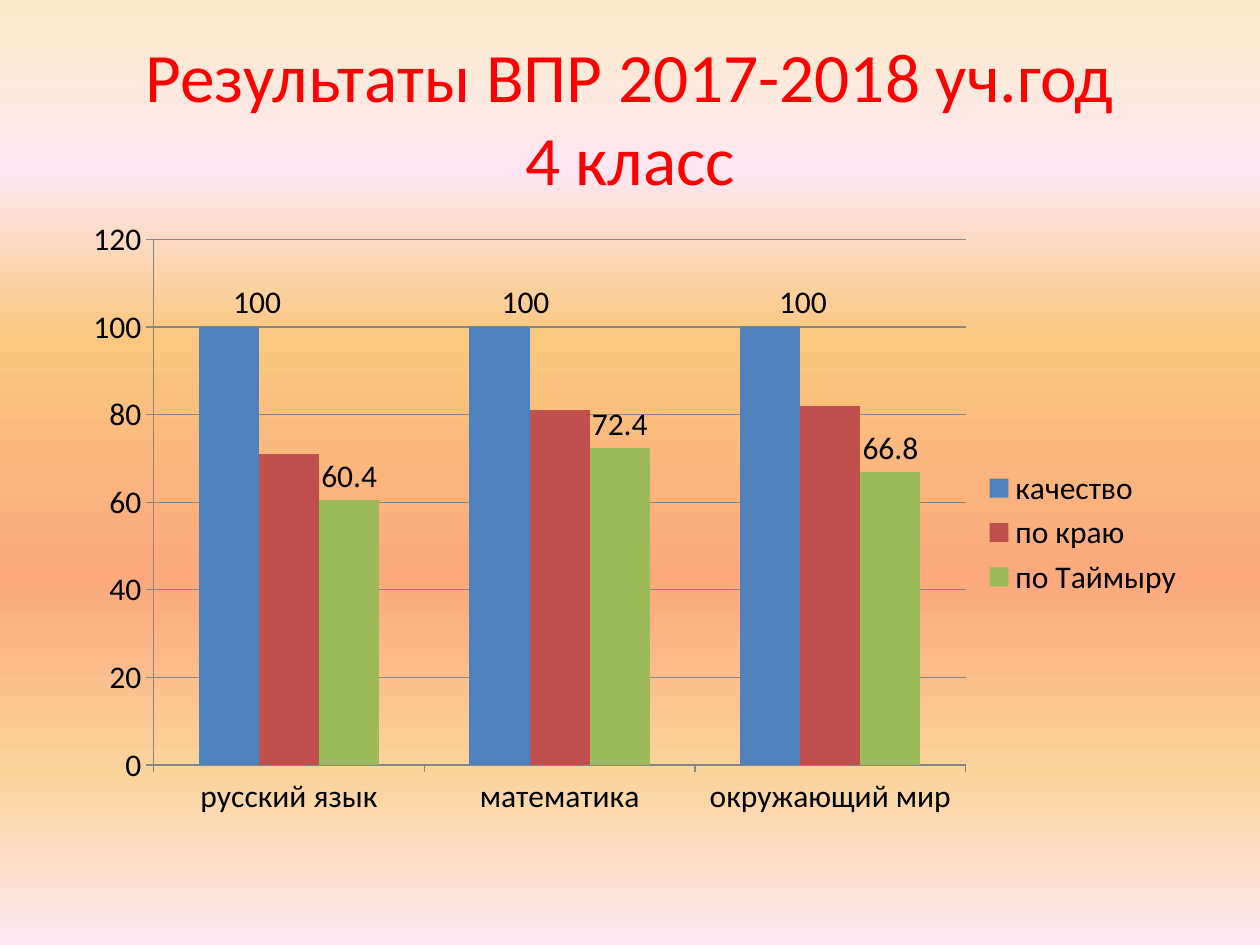
from lxml import etree
from pptx import Presentation
from pptx.chart import data
from pptx.dml import color
from pptx.enum import chart as ch, text
from pptx.oxml import ns, parse_xml
from pptx.util import Pt

RED = color.RGBColor(0xFF, 0x00, 0x00)
BLACK = color.RGBColor(0x00, 0x00, 0x00)
GREY = color.RGBColor(0x86, 0x86, 0x86)
BLUE = color.RGBColor(0x4F, 0x81, 0xBD)
BRICK = color.RGBColor(0xC0, 0x50, 0x4D)
GREEN = color.RGBColor(0x9B, 0xBB, 0x59)
CREAM = color.RGBColor(0xFB, 0xEA, 0xC7)
PINK = color.RGBColor(0xFE, 0xE7, 0xF2)
AMBER = color.RGBColor(0xFA, 0xC7, 0x7D)
CORAL = color.RGBColor(0xFB, 0xA9, 0x7D)
SAND = color.RGBColor(0xFB, 0xD4, 0x9C)

SUNSET = [(0, CREAM), (18, PINK), (36, AMBER), (61, CORAL), (82, SAND), (100, PINK)]
SUBJECTS = ["русский язык", "математика", "окружающий мир"]
RESULTS = [
    ("качество", (100, 100, 100), BLUE),
    ("по краю", (71, 81, 82), BRICK),
    ("по Таймыру", (60.4, 72.4, 66.8), GREEN),
]
LABEL_SHIFTS = [0.025, 0.023, 0.029]


def apply(target, formats):
    for name, value in formats.items():
        setattr(target, name, value)


def layout_xml(**settings):
    parts = "".join(f'<c:{key} val="{value}"/>' for key, value in settings.items())
    return parse_xml(
        f'<c:layout {ns.nsdecls("c")}><c:manualLayout>{parts}</c:manualLayout></c:layout>')


def paint_background(slide):
    fill = slide.background.fill
    fill.gradient()
    fill.gradient_angle = 270
    stops = slide.background._cSld.find(".//" + ns.qn("a:gsLst"))
    for old_stop in list(stops):
        stops.remove(old_stop)
    for percent, shade in SUNSET:
        stop = etree.SubElement(stops, ns.qn("a:gs"), pos=str(percent * 1000))
        etree.SubElement(stop, ns.qn("a:srgbClr"), val=str(shade))


def place_heading(slide, left, top, width, height):
    heading = slide.shapes.title
    apply(heading, dict(left=left, top=top, width=width, height=height))
    frame = heading.text_frame
    apply(frame, dict(text="Результаты ВПР 2017-2018 уч.год\v4 класс", word_wrap=True,
                      auto_size=text.MSO_AUTO_SIZE.NONE,
                      vertical_anchor=text.MSO_ANCHOR.MIDDLE))
    paragraph = frame.paragraphs[0]
    paragraph.alignment = text.PP_ALIGN.CENTER
    for run in paragraph.runs:
        apply(run.font, dict(name="Calibri", size=Pt(39.6)))
        run.font.color.rgb = RED


def format_axes(chart):
    for axis in (chart.category_axis, chart.value_axis):
        apply(axis, dict(major_tick_mark=ch.XL_TICK_MARK.OUTSIDE,
                         minor_tick_mark=ch.XL_TICK_MARK.NONE))
        axis.format.line.color.rgb = GREY
    scale = chart.value_axis
    apply(scale, dict(minimum_scale=0, maximum_scale=120, major_unit=20,
                      has_major_gridlines=True))
    scale.major_gridlines.format.line.color.rgb = GREY


def label_series(series):
    labels = series.data_labels
    apply(labels, dict(show_value=True, position=ch.XL_LABEL_POSITION.OUTSIDE_END))


def shift_labels(series):
    for point, shift in enumerate(LABEL_SHIFTS):
        series.points[point].data_label.position = ch.XL_LABEL_POSITION.OUTSIDE_END
        label = series.data_labels._element.findall(ns.qn("c:dLbl"))[point]
        label.find(ns.qn("c:idx")).addnext(layout_xml(x=shift, y=-0.002))


def place_results(slide, left, top, width, height):
    results = data.CategoryChartData()
    results.categories = SUBJECTS
    for name, values, _ in RESULTS:
        results.add_series(name, values)
    chart = slide.shapes.add_chart(
        ch.XL_CHART_TYPE.COLUMN_CLUSTERED, left, top, width, height, results).chart
    apply(chart, dict(has_title=False, has_legend=True))
    apply(chart.font, dict(name="Calibri", size=Pt(18)))
    chart.font.color.rgb = BLACK
    apply(chart.legend, dict(position=ch.XL_LEGEND_POSITION.RIGHT, include_in_layout=False))
    format_axes(chart)

    plot = chart.plots[0]
    apply(plot, dict(gap_width=150, overlap=0, vary_by_categories=False))
    for series, (_, _, shade) in zip(plot.series, RESULTS):
        series.format.fill.solid()
        series.format.fill.fore_color.rgb = shade
    quality, _, taimyr = plot.series
    label_series(quality)
    label_series(taimyr)
    shift_labels(quality)

    area = chart._chartSpace.find(".//" + ns.qn("c:plotArea"))
    for old_layout in area.findall(ns.qn("c:layout")):
        area.remove(old_layout)
    area.insert(0, layout_xml(layoutTarget="inner", xMode="edge", yMode="edge",
                              x=0.08, y=0.03, w=0.716, h=0.843))


def main():
    deck = Presentation()
    apply(deck, dict(slide_width=Pt(720), slide_height=Pt(540)))
    slide = deck.slides.add_slide(deck.slide_layouts[5])
    paint_background(slide)
    place_heading(slide, Pt(36), Pt(21.6), Pt(648), Pt(90))
    place_results(slide, Pt(36), Pt(126), Pt(648), Pt(356.4))
    deck.save("out.pptx")


if __name__ == "__main__":
    main()
